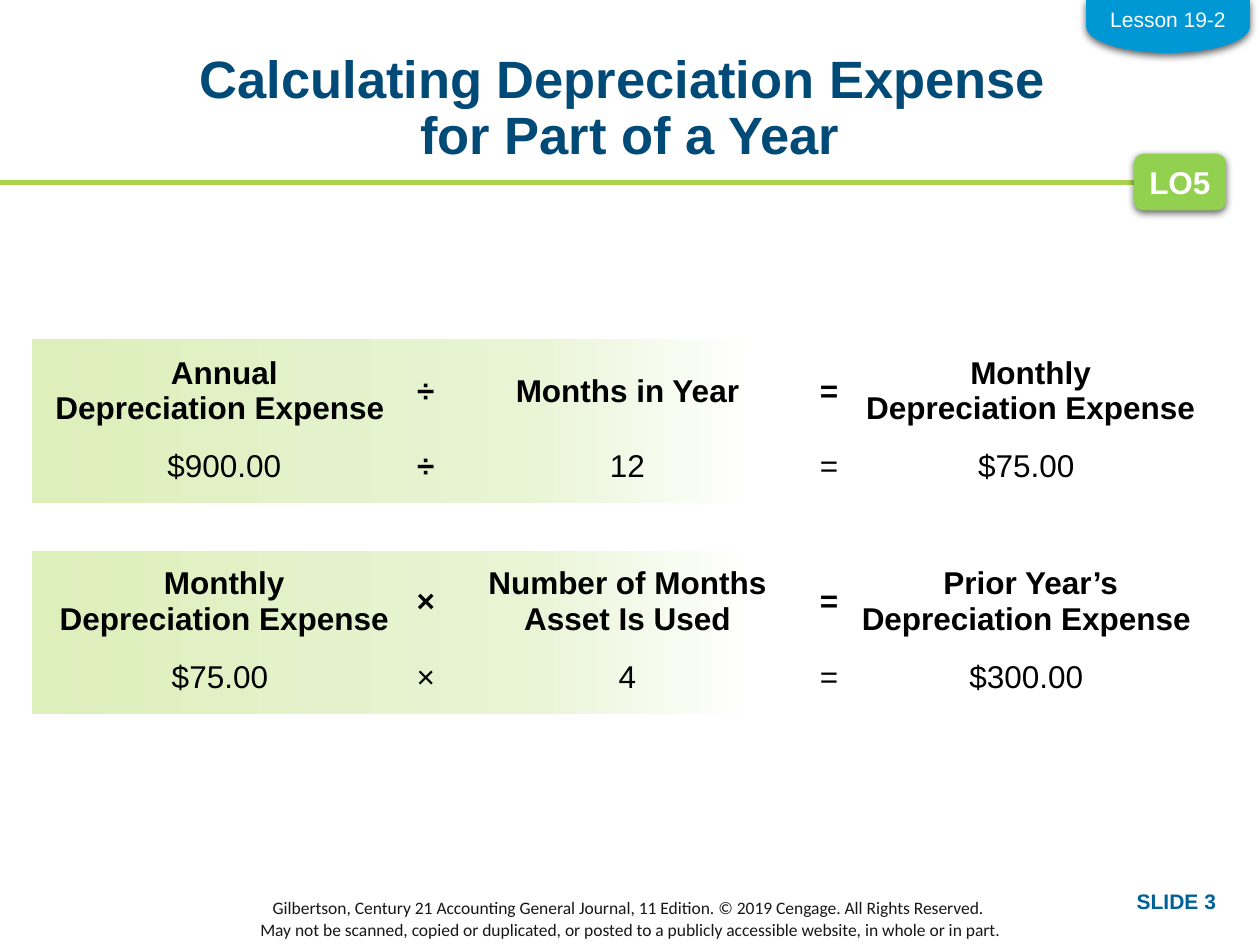
from dataclasses import dataclass

from lxml import etree
from pptx import Presentation
from pptx import util as u
from pptx.dml import color
from pptx.enum import shapes, text
from pptx.oxml import ns


@dataclass(frozen=True)
class Theme:
    title: str = "004A78"
    rule: str = "AAD24B"
    objective: str = "92D050"
    lesson: str = "0098D4"
    number: str = "006198"
    footer: str = "181717"
    black: str = "000000"
    white: str = "FFFFFF"
    band: tuple = ((0, "DDEFBB"), (50, "E8F4D4"), (74, "FFFFFF"))
    title_size: int = 30
    body_size: int = 18
    label_size: int = 12
    footer_size: int = 10


theme = Theme()
In = u.Inches
center = text.PP_ALIGN.CENTER
middle = text.MSO_ANCHOR.MIDDLE
A = ns.nsdecls("a")


def write(frame, lines, size, ink, bold=False, font="Arial", align=center, **frame_format):
    """Fill a text frame, one paragraph a line."""
    for name, value in frame_format.items():
        setattr(frame, name, value)
    for index, line in enumerate(lines):
        paragraph = frame.paragraphs[0] if index == 0 else frame.add_paragraph()
        paragraph.text = line
        paragraph.alignment = align
        for run in paragraph.runs:
            for name, value in {"size": u.Pt(size), "bold": bold, "name": font}.items():
                setattr(run.font, name, value)
            run.font.color.rgb = color.RGBColor.from_string(ink)


def add_tab(kind, left, top, width, height, fill):
    """Add a solid shape with a soft shadow below it."""
    tab = slide.shapes.add_shape(kind, In(left), In(top), In(width), In(height))
    tab.fill.solid()
    tab.fill.fore_color.rgb = color.RGBColor.from_string(fill)
    tab.line.fill.background()
    tab._element.spPr.append(etree.fromstring(
        f'<a:effectLst {A}><a:outerShdw blurRad="{u.Pt(4.5)}" dist="{u.Pt(1.5)}" dir="5400000" '
        f'rotWithShape="0"><a:srgbClr val="{theme.black}"><a:alpha val="63000"/></a:srgbClr>'
        '</a:outerShdw></a:effectLst>'))
    return tab


deck = Presentation()
deck.slide_width, deck.slide_height = In(10), In(7.5)
slide = deck.slides.add_slide(deck.slide_layouts[6])

# Rule under the title
rule = slide.shapes.add_connector(shapes.MSO_CONNECTOR.STRAIGHT, In(0), In(1.45), In(9.5), In(1.45))
rule.line.color.rgb = color.RGBColor.from_string(theme.rule)
rule.line.width = u.Pt(3)
etree.SubElement(rule._element.spPr, ns.qn("a:effectLst"))

# Copyright footer
footer = slide.shapes.add_textbox(In(0), In(7.14), In(10), In(0.3))
write(footer.text_frame, [
    "Gilbertson, Century 21 Accounting General Journal, 11 Edition. © 2019 Cengage. All Rights Reserved. ",
    "May not be scanned, copied or duplicated, or posted to a publicly accessible website, in whole or in part.",
], theme.footer_size, theme.footer, font="Calibri", word_wrap=True, vertical_anchor=middle)

# Title
title = slide.shapes.add_textbox(In(0.69), In(0.42), In(8.62), In(0.8))
write(title.text_frame, ["Calculating Depreciation Expense \vfor Part of a Year"],
      theme.title_size, theme.title, bold=True, word_wrap=True,
      margin_left=0, margin_right=0, margin_top=0, margin_bottom=0)
title.text_frame.paragraphs[0].line_spacing = 0.9

# Two equations, each a gradient band with a heading row and a value row
equations = [
    (2.69, 2.75,
     ["Annual\vDepreciation Expense ", "÷", "Months in Year", "=", "Monthly\vDepreciation Expense"],
     ["$900.00", "÷", "12", "=", "$75.00 "]),
    (4.37, 4.42,
     ["Monthly\vDepreciation Expense", "×", "Number of Months\vAsset Is Used", "=",
      "Prior Year’s\vDepreciation Expense "],
     ["$75.00 ", "×", "4", "=", "$300.00 "]),
]
heading_height, value_height = 0.7, 0.5
columns = [3, 0.2, 3, 0.2, 3]
stops = "".join(f'<a:gs pos="{pos * 1000}"><a:srgbClr val="{rgb}"/></a:gs>' for pos, rgb in theme.band)

for band_top, heading_top, headings, values in equations:
    band = slide.shapes.add_shape(shapes.MSO_SHAPE.RECTANGLE, In(0.25), In(band_top), In(7.75), In(1.3))
    band.shadow.inherit = False
    band.line.fill.background()
    band._element.spPr.find(ns.qn("a:prstGeom")).addnext(etree.fromstring(
        f'<a:gradFill {A} rotWithShape="1"><a:gsLst>{stops}</a:gsLst><a:lin ang="0" scaled="0"/></a:gradFill>'))

    rows = [(heading_top, heading_height, headings, True),
            (heading_top + heading_height, value_height, values, False)]
    for top, height, entries, is_heading in rows:
        frame = slide.shapes.add_table(1, len(columns), In(0.28), In(top), In(sum(columns)), In(height))
        row = frame.table
        row.first_row = row.horz_banding = False
        # Plain style: no grid, no banding
        row._tbl.tblPr.find(ns.qn("a:tableStyleId")).text = "{2D5ABB26-0587-4C30-8999-92F81FD0307C}"
        for index, (width, entry) in enumerate(zip(columns, entries)):
            row.columns[index].width = In(width)
            cell = row.cell(0, index)
            cell.fill.background()
            cell_format = {"vertical_anchor": middle, "margin_left": In(0.01), "margin_right": In(0.01),
                           "margin_top": In(0.01), "margin_bottom": 0}
            for name, value in cell_format.items():
                setattr(cell, name, value)
            write(cell.text_frame, [entry], theme.body_size, theme.black, bold=is_heading or entry == "÷")

# Learning objective tab
objective = add_tab(shapes.MSO_SHAPE.ROUNDED_RECTANGLE, 9, 1.22, 0.73, 0.45, theme.objective)
write(objective.text_frame, ["LO5"], theme.body_size, theme.white, bold=True, word_wrap=False,
      vertical_anchor=middle)

# Slide number
number = slide.shapes.add_textbox(In(7.75), In(7), In(2), In(0.3))
write(number.text_frame, ["SLIDE 3"], theme.label_size, theme.number, bold=True,
      align=text.PP_ALIGN.RIGHT, word_wrap=True)

# Lesson tab hanging from the top edge
lesson_tab = add_tab(shapes.MSO_SHAPE.FLOWCHART_DELAY, 9.06, -0.44, 0.42, 1.3, theme.lesson)
lesson_tab.rotation = 90
lesson = slide.shapes.add_textbox(In(8.71), In(0), In(1.12), In(0.3))
write(lesson.text_frame, ["Lesson 19-2"], theme.label_size, theme.white, word_wrap=False,
      auto_size=text.MSO_AUTO_SIZE.SHAPE_TO_FIT_TEXT)

deck.save("out.pptx")
